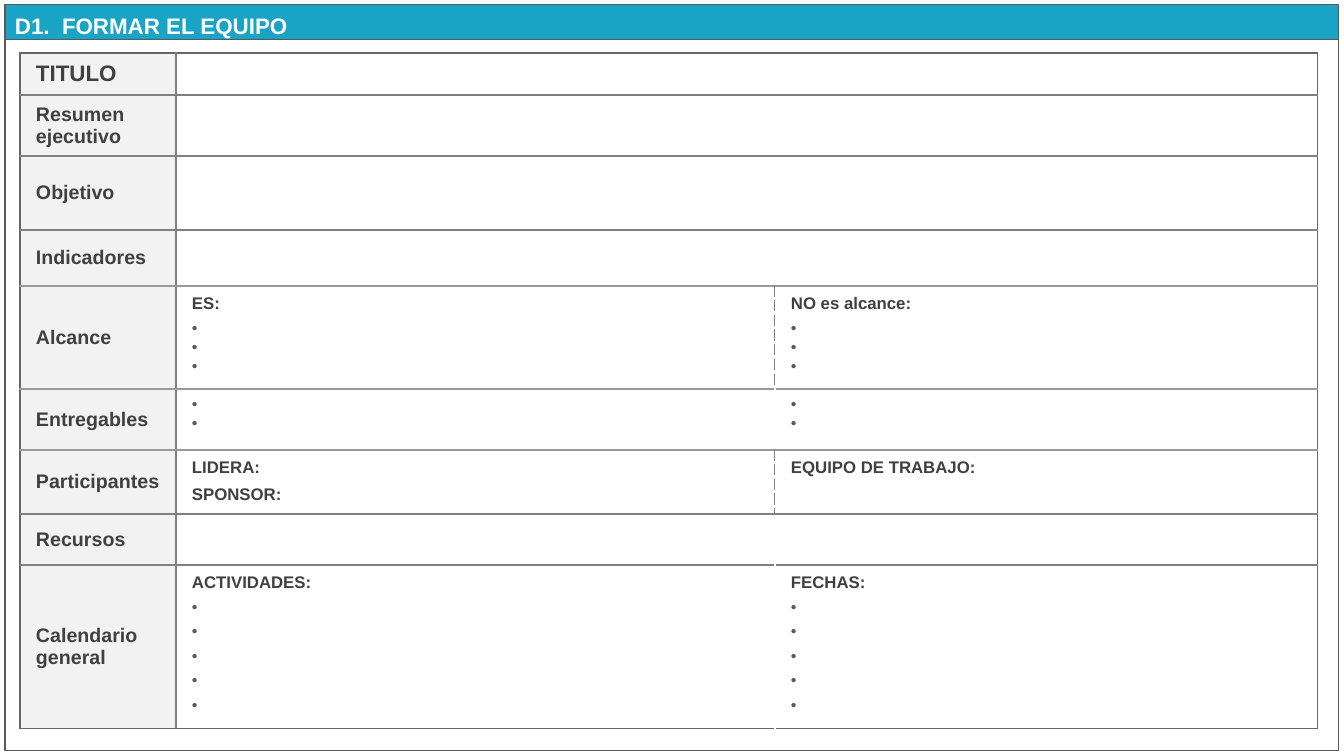
import pptx
import pptx.util
import pptx.dml.color
import pptx.enum.shapes
import pptx.enum.text
import pptx.oxml
import pptx.oxml.ns
from dataclasses import dataclass


@dataclass(frozen=True)
class Theme:
    font: str = "Arial"
    banner: str = "19A4C6"
    white: str = "FFFFFF"
    label_fill: str = "F2F2F2"
    ink: str = "404040"
    bullet: str = "595959"
    outer: str = "666666"
    inner: str = "808080"
    light: str = "999999"
    title_size: int = 16
    label_size: int = 14
    body_size: int = 12


THEME = Theme()
SCALE = 914400 / 100.8
PAGE_SIZE = (1344, 756)
BANNER = (5, 5, 1334, 35)
FRAME = (5, 40, 1334, 711)
TABLE_ORIGIN = (20, 53)
COLUMNS = (156, 599, 543)
INSET_X, INSET_Y, LABEL_INSET_RIGHT = 16, 8, 12
INDENT = 19

TITLE = "D1.  FORMAR EL EQUIPO"
DASH, BLANK = (THEME.inner, 0.75, "sysDash"), (THEME.white, 1, "solid")

# Each body holds (headings, bullet count, space after a bullet).
ROWS = [
    ("TITULO", 42, None, []),
    ("Resumen ejecutivo", 61, None, []),
    ("Objetivo", 74, None, []),
    ("Indicadores", 56, None, []),
    ("Alcance", 103, DASH, [(["ES:"], 3, 0), (["NO es alcance:"], 3, 0)]),
    ("Entregables", 61, BLANK, [([], 2, 0), ([], 2, 0)]),
    ("Participantes", 64, DASH, [(["LIDERA:", "SPONSOR:"], 0, 0), (["EQUIPO DE TRABAJO:"], 0, 0)]),
    ("Recursos", 51, None, []),
    ("Calendario general", 164, BLANK, [(["ACTIVIDADES:"], 5, 4), (["FECHAS:"], 5, 4)]),
]
ROW_LINES = [THEME.outer] + [THEME.inner] * 3 + [THEME.light] * 3 + [THEME.inner] * 2 + [THEME.outer]


def px(length):
    return pptx.util.Emu(round(length * SCALE))


def rgb(value):
    return pptx.dml.color.RGBColor.from_string(value)


def write(frame, text, first=False, size=THEME.body_size, color=THEME.ink, bold=True,
          after=0, spacing=None, bullet=False):
    para = frame.paragraphs[0] if first else frame.add_paragraph()
    para.alignment = pptx.enum.text.PP_ALIGN.LEFT
    para.space_after = pptx.util.Pt(after)
    if spacing:
        para.line_spacing = spacing
    if bullet:
        props = para._p.get_or_add_pPr()
        props.set("marL", str(px(INDENT)))
        props.set("indent", str(-px(INDENT)))
        mark = pptx.oxml.ns.qn("a:buChar")
        props.append(props.makeelement(mark, {"char": "•"}))
    span = para.add_run()
    span.text = text
    span.font.name = THEME.font
    span.font.size = pptx.util.Pt(size)
    span.font.bold = bold
    span.font.color.rgb = rgb(color)


def add_box(page, bounds, fill=None):
    box = page.shapes.add_shape(pptx.enum.shapes.MSO_SHAPE.RECTANGLE, *map(px, bounds))
    box.shadow.inherit = False
    if fill:
        box.fill.solid()
        box.fill.fore_color.rgb = rgb(fill)
    else:
        box.fill.background()
    box.line.color.rgb = rgb(THEME.bullet)
    box.line.width = pptx.util.Pt(0.75)
    return box


def set_borders(cell, edges):
    props = cell._tc.get_or_add_tcPr()
    for side, edge in zip("LRTB", edges):
        if edge:
            color, width, dash = edge
            props.append(pptx.oxml.parse_xml(
                f'<a:ln{side} {pptx.oxml.ns.nsdecls("a")} w="{pptx.util.Pt(width)}">'
                f'<a:solidFill><a:srgbClr val="{color}"/></a:solidFill>'
                f'<a:prstDash val="{dash}"/></a:ln{side}>'))


def set_insets(cell, right=INSET_X):
    cell.margin_left, cell.margin_right = px(INSET_X), px(right)
    cell.margin_top = cell.margin_bottom = px(INSET_Y)


def fill_body(cell, headings, bullets, after):
    set_insets(cell)
    lines = [(text, dict(after=6)) for text in headings]
    lines += [(" ", dict(after=after, bullet=True, bold=False, color=THEME.bullet))] * bullets
    for index, (text, style) in enumerate(lines):
        write(cell.text_frame, text, first=index == 0, **style)


def add_charter(page):
    heights = [row[1] for row in ROWS]
    bounds = (*TABLE_ORIGIN, sum(COLUMNS), sum(heights))
    table = page.shapes.add_table(len(ROWS), len(COLUMNS), *map(px, bounds)).table
    table.first_row = table.horz_banding = False
    for column, width in zip(table.columns, COLUMNS):
        column.width = px(width)
    for r, (label, height, divider, bodies) in enumerate(ROWS):
        table.rows[r].height = px(height)
        verticals = [(THEME.outer, 1, "solid"), (THEME.inner, 1, "solid"),
                     divider, (THEME.outer, 1, "solid")]
        above, below = [(color, 1, "solid") for color in ROW_LINES[r:r + 2]]
        for c in range(len(COLUMNS)):
            cell = table.cell(r, c)
            right = verticals[c + 1] if bodies or c == 0 else verticals[-1]
            set_borders(cell, (verticals[c], right, above, below))
            if c == 0:
                cell.fill.solid()
                cell.fill.fore_color.rgb = rgb(THEME.label_fill)
            else:
                cell.fill.background()
        heading = table.cell(r, 0)
        set_insets(heading, LABEL_INSET_RIGHT)
        heading.vertical_anchor = pptx.enum.text.MSO_ANCHOR.MIDDLE
        write(heading.text_frame, label, first=True,
              size=THEME.title_size if r == 0 else THEME.label_size)
        if not bodies:
            table.cell(r, 1).merge(table.cell(r, 2))
        for c, body in enumerate(bodies, 1):
            fill_body(table.cell(r, c), *body)


def main():
    deck = pptx.Presentation()
    deck.slide_width, deck.slide_height = map(px, PAGE_SIZE)
    page = deck.slides.add_slide(deck.slide_layouts[6])
    banner = add_box(page, BANNER, THEME.banner)
    banner.text_frame.word_wrap = True
    banner.text_frame.vertical_anchor = pptx.enum.text.MSO_ANCHOR.MIDDLE
    write(banner.text_frame, TITLE, first=True, size=THEME.title_size,
          color=THEME.white, spacing=1.2)
    add_box(page, FRAME)
    add_charter(page)
    deck.save("out.pptx")


if __name__ == "__main__":
    main()
